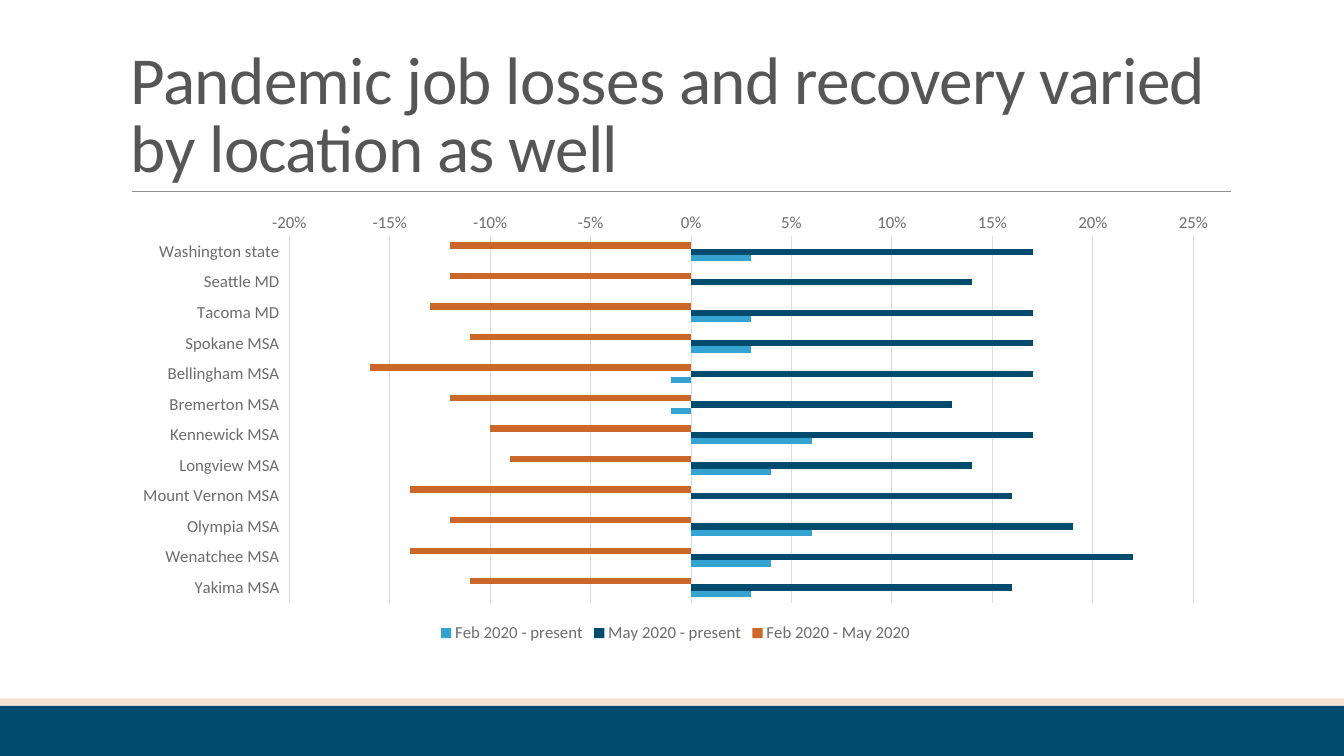
from lxml import etree
from pptx import Presentation
from pptx import util as u
from pptx.chart import data as chart_data
from pptx.dml.color import RGBColor
from pptx.enum import chart as ch, shapes, text
from pptx.oxml import ns

FONT = "Calibri"
COLORS = {
    "navy": "004B6E", "peach": "F6E0D2", "rule": "8E8E8E", "title": "565656",
    "label": "6C6C6C", "grid": "DDDDDD", "orange": "CB6728", "sky": "34A3D2",
}
AREAS = [
    "Washington state", "Seattle MD", "Tacoma MD", "Spokane MSA",
    "Bellingham MSA", "Bremerton MSA", "Kennewick MSA", "Longview MSA",
    "Mount Vernon MSA", "Olympia MSA", "Wenatchee MSA", "Yakima MSA",
]
PERIODS = [
    ("Feb 2020 - May 2020", "orange",
     [-0.12, -0.12, -0.13, -0.11, -0.16, -0.12, -0.1, -0.09, -0.14, -0.12, -0.14, -0.11]),
    ("May 2020 - present", "navy",
     [0.17, 0.14, 0.17, 0.17, 0.17, 0.13, 0.17, 0.14, 0.16, 0.19, 0.22, 0.16]),
    ("Feb 2020 - present", "sky",
     [0.03, 0, 0.03, 0.03, -0.01, -0.01, 0.06, 0.04, 0, 0.06, 0.04, 0.03]),
]


def rgb(name):
    """Return the named colour."""
    return RGBColor.from_string(COLORS[name])


def inches(*lengths):
    """Convert lengths to inches."""
    return [u.Inches(length) for length in lengths]


def style_font(font, size, color):
    """Set typeface, size and colour."""
    font.name = FONT
    font.size = u.Pt(size)
    font.color.rgb = rgb(color)


def add_band(slide, top, height, color):
    """Draw a full-width footer band."""
    band = slide.shapes.add_shape(
        shapes.MSO_SHAPE.RECTANGLE, *inches(0, top, 13.33, height))
    band.shadow.inherit = False
    band.fill.solid()
    band.fill.fore_color.rgb = rgb(color)
    band.line.fill.background()


def add_rule(slide, left, right, y, color, width):
    """Draw a thin horizontal rule."""
    rule = slide.shapes.add_connector(
        shapes.MSO_CONNECTOR.STRAIGHT, *inches(left, y, right, y))
    rule.line.color.rgb = rgb(color)
    rule.line.width = u.Pt(width)
    etree.SubElement(rule.element.spPr, ns.qn("a:effectLst"))


def add_text(slide, words, box, size, color, line_spacing=1.0, tracking=0.0):
    """Add bottom-anchored wrapped text."""
    frame = slide.shapes.add_textbox(*inches(*box)).text_frame
    frame.word_wrap = True
    frame.vertical_anchor = text.MSO_ANCHOR.BOTTOM
    paragraph = frame.paragraphs[0]
    paragraph.line_spacing = line_spacing
    run = paragraph.add_run()
    run.text = words
    style_font(run.font, size, color)
    run.font._element.set("spc", str(round(tracking * 100)))


def style_axis(axis):
    """Set the look shared by both axes."""
    axis.major_tick_mark = axis.minor_tick_mark = ch.XL_TICK_MARK.NONE
    style_font(axis.tick_labels.font, 12, "label")


def style_grid(line):
    """Format an axis line or gridline."""
    line.color.rgb = rgb("grid")
    line.width = u.Pt(0.75)


def add_jobs_chart(slide, box):
    """Add the clustered bars of job change by area."""
    job_changes = chart_data.CategoryChartData(number_format="0%")
    job_changes.categories = AREAS
    for period, _, changes in PERIODS:
        job_changes.add_series(period, changes)
    chart = slide.shapes.add_chart(
        ch.XL_CHART_TYPE.BAR_CLUSTERED, *inches(*box), job_changes).chart
    chart.has_title = False
    style_font(chart.font, 12, "label")

    bars = chart.plots[0]
    bars.gap_width = 182
    bars.vary_by_categories = False
    for series, (_, color, _) in zip(bars.series, PERIODS):
        series.invert_if_negative = False
        series.format.fill.solid()
        series.format.fill.fore_color.rgb = rgb(color)

    areas = chart.category_axis
    style_axis(areas)
    areas.reverse_order = True
    areas.has_major_gridlines = False
    areas.tick_label_position = ch.XL_TICK_LABEL_POSITION.LOW
    style_grid(areas.format.line)

    change = chart.value_axis
    style_axis(change)
    change.minimum_scale, change.maximum_scale = -0.2, 0.25
    change.major_unit = 0.05
    change.tick_labels.number_format = "0%"
    change.tick_labels.number_format_is_linked = False
    change.format.line.fill.background()
    change.has_major_gridlines = True
    style_grid(change.major_gridlines.format.line)

    chart.has_legend = True
    chart.legend.position = ch.XL_LEGEND_POSITION.BOTTOM
    chart.legend.include_in_layout = False
    style_font(chart.legend.font, 12, "label")


def main():
    """Build and save the slide."""
    deck = Presentation()
    deck.slide_width, deck.slide_height = inches(13.33, 7.5)
    slide = deck.slides.add_slide(deck.slide_layouts[6])
    add_band(slide, 7, 0.5, "navy")
    add_band(slide, 6.93, 0.07, "peach")
    add_rule(slide, 1.31, 12.21, 1.9, "rule", 0.5)
    add_text(slide, "Pandemic job losses and recovery varied by location as well",
             (1.2, 0.31, 11, 1.59), size=48, color="title",
             line_spacing=0.85, tracking=-0.5)
    add_jobs_chart(slide, (1.2, 2.02, 11, 4.4))
    deck.save("out.pptx")


if __name__ == "__main__":
    main()
